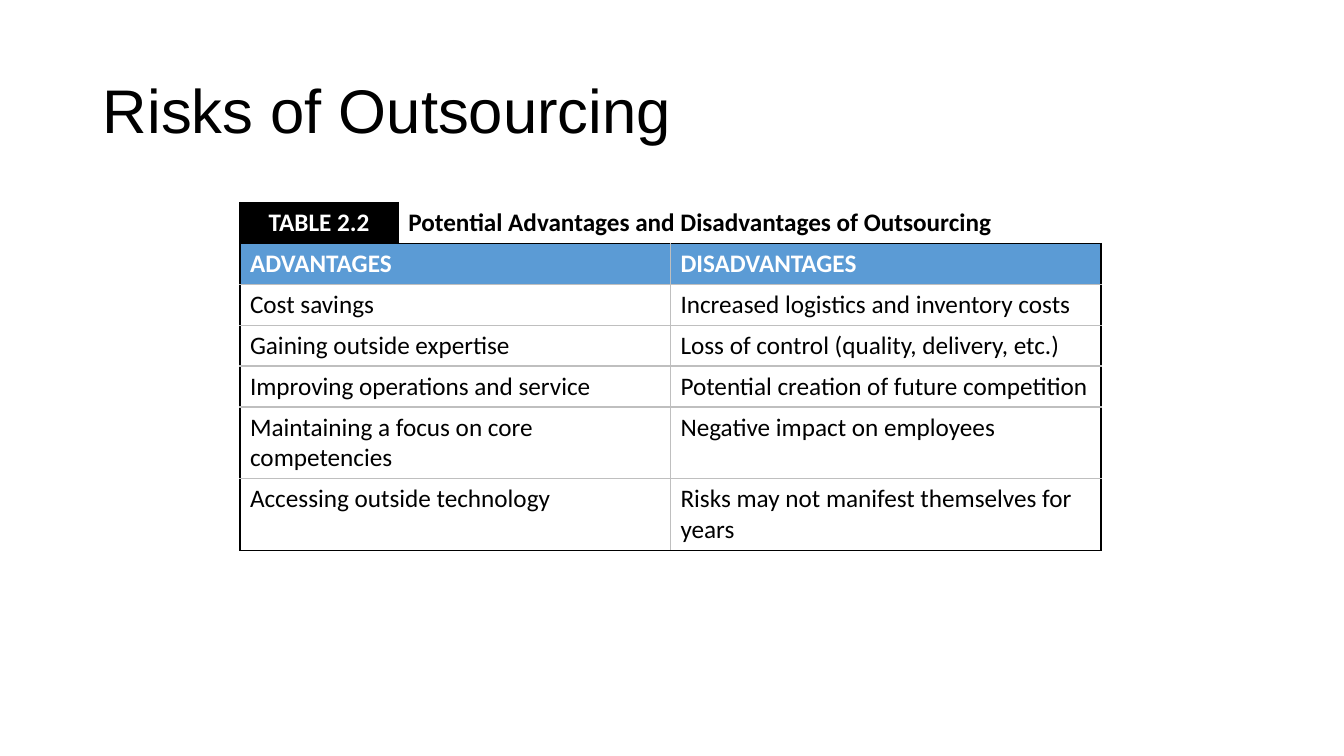
import pptx
import pptx.dml.color
import pptx.enum.text
import pptx.oxml
import pptx.oxml.ns
import pptx.util

Inches, Pt = pptx.util.Inches, pptx.util.Pt
RGBColor = pptx.dml.color.RGBColor
Align = pptx.enum.text.PP_ALIGN
Anchor = pptx.enum.text.MSO_ANCHOR

BLACK = RGBColor(0x00, 0x00, 0x00)
WHITE = RGBColor(0xFF, 0xFF, 0xFF)
BLUE = RGBColor(0x5B, 0x9B, 0xD5)
GREY = RGBColor(0xBF, 0xBF, 0xBF)

TITLE_BOX = (0.92, 0.4, 11.5, 1.45)
TABLE_BOX = (2.38, 2.01, 8.54, 3.4)
COLUMN_WIDTHS = (1.57, 2.7, 4.27)
LINE_ROW, TWO_LINE_ROW = 0.4, 0.7
ROW_HEIGHTS = [LINE_ROW] * 5 + [TWO_LINE_ROW] * 2

CAPTION = ("TABLE 2.2", "Potential Advantages and Disadvantages of Outsourcing")
HEADINGS = ("ADVANTAGES", "DISADVANTAGES")
POINTS = (
    ("Cost savings", "Increased logistics and inventory costs"),
    ("Gaining outside expertise", "Loss of control (quality, delivery, etc.)"),
    ("Improving operations and service", "Potential creation of future competition"),
    ("Maintaining a focus on core competencies", "Negative impact on employees"),
    ("Accessing outside technology", "Risks may not manifest themselves for years"),
)


def set_font(span, **format_values):
    color = format_values.pop("color")
    for name, value in format_values.items():
        setattr(span.font, name, value)
    span.font.color.rgb = color


def set_borders(cell, left, right, top, bottom):
    """Give each side a 1 pt line of its colour, or no line for None."""
    properties = cell._tc.get_or_add_tcPr()
    for side, color in zip("LRTB", (left, right, top, bottom)):
        paint = (f'<a:solidFill><a:srgbClr val="{color}"/></a:solidFill>'
                 if color is not None else "<a:noFill/>")
        properties.append(pptx.oxml.parse_xml(
            f'<a:ln{side} {pptx.oxml.ns.nsdecls("a")} w="{Pt(1)}">{paint}</a:ln{side}>'))


def fill_cell(cell, text, fill, color, bold, align):
    if fill is None:
        cell.fill.background()
    else:
        cell.fill.solid()
        cell.fill.fore_color.rgb = fill
    para = cell.text_frame.paragraphs[0]
    para.alignment = align
    span = para.add_run()
    span.text = text
    set_font(span, name="Calibri", size=Pt(18), bold=bold, color=color)


def add_title(page, box, text):
    title = page.shapes.title
    for name, value in zip(("left", "top", "width", "height"), box):
        setattr(title, name, Inches(value))
    title.text_frame.vertical_anchor = Anchor.MIDDLE
    para = title.text_frame.paragraphs[0]
    para.alignment, para.line_spacing = Align.LEFT, 0.9
    span = para.add_run()
    span.text = text
    set_font(span, name="Arial", size=Pt(44), color=BLACK)


def add_comparison_table(page, box, caption, headings, points):
    """Caption row split after column 0; the rows below split after column 1."""
    rows = (caption, headings, *points)
    table = page.shapes.add_table(len(rows), len(COLUMN_WIDTHS),
                                  *map(Inches, box)).table
    table.first_row = table.horz_banding = False
    for column, width in zip(table.columns, COLUMN_WIDTHS):
        column.width = Inches(width)
    for row, height in zip(table.rows, ROW_HEIGHTS):
        row.height = Inches(height)

    last = len(rows) - 1
    for index, texts in enumerate(rows):
        is_caption, is_heading = index == 0, index == 1
        groups = ((0,), (1, 2)) if is_caption else ((0, 1), (2,))
        for side, (group, text) in enumerate(zip(groups, texts)):
            is_tag = is_caption and side == 0
            if is_caption:
                borders = (BLACK,) * 4 if is_tag else (BLACK, None, None, BLACK)
            else:
                borders = (GREY if side else BLACK, BLACK if side else GREY,
                           BLACK if is_heading else GREY,
                           BLACK if index == last else GREY)
            for column in group:
                set_borders(table.cell(index, column), *borders)
            cell = table.cell(index, group[0])
            if len(group) > 1:
                cell.merge(table.cell(index, group[-1]))
            fill = BLACK if is_tag else BLUE if is_heading else None
            fill_cell(cell, text, fill, BLACK if fill is None else WHITE,
                      bold=is_caption or is_heading,
                      align=Align.CENTER if is_tag else Align.LEFT)


def main():
    deck = pptx.Presentation()
    deck.slide_width, deck.slide_height = Inches(13.33), Inches(7.5)
    page = deck.slides.add_slide(deck.slide_layouts.get_by_name("Title Only"))
    add_title(page, TITLE_BOX, "Risks of Outsourcing")
    add_comparison_table(page, TABLE_BOX, CAPTION, HEADINGS, POINTS)
    deck.save("out.pptx")


if __name__ == "__main__":
    main()
